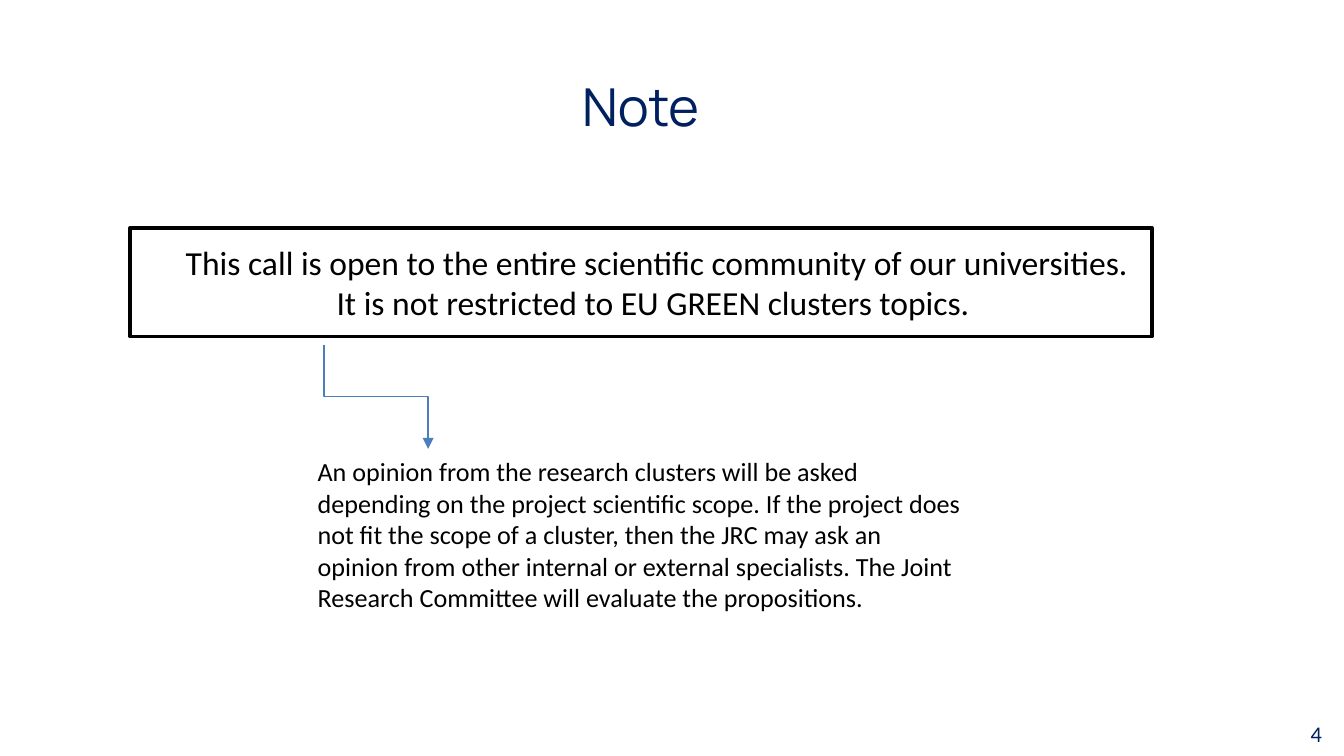
from dataclasses import dataclass

from lxml.etree import SubElement
from pptx import Presentation
from pptx.dml.color import RGBColor
from pptx.enum.shapes import MSO_CONNECTOR as Connector, MSO_SHAPE as Shape
from pptx.enum.text import MSO_ANCHOR as Anchor, PP_ALIGN as Align
from pptx.oxml.ns import qn
from pptx.shapes.autoshape import Shape as TextShape
from pptx.slide import Slide
from pptx.util import Inches, Pt

COLUMNS, ROWS = 100, 56.25
CELL = Inches(0.1)
NAVY = RGBColor(0x00, 0x20, 0x60)
BLUE = RGBColor(0x4B, 0x7E, 0xBC)
BLACK = RGBColor(0x00, 0x00, 0x00)
WHITE = RGBColor(0xFF, 0xFF, 0xFF)


@dataclass(frozen=True)
class Area:
    column: float
    row: float
    columns: float
    rows: float

    def lengths(self) -> list[int]:
        return [round(cells * CELL) for cells in (self.column, self.row, self.columns, self.rows)]


@dataclass(frozen=True)
class Label:
    area: Area
    text: str
    size: int
    color: RGBColor = BLACK
    font: str = "Calibri"
    align: Align = Align.LEFT
    anchor: Anchor = Anchor.TOP


TITLE = Label(Area(20.1, 3.15, 55.9, 9.4), "Note ", 28, NAVY, "Manrope", Align.CENTER, Anchor.MIDDLE)
LABELS = (
    Label(
        Area(12.1, 17.5, 73.6, 7.1),
        "This call is open to the entire scientific community of our universities. "
        "It is not restricted to EU GREEN clusters topics. ",
        18,
        align=Align.CENTER,
    ),
    Label(
        Area(22.65, 33.42, 50, 12.8),
        "An opinion from the research clusters will be asked depending on the project "
        "scientific scope. If the project does not fit the scope of a cluster, then the JRC "
        "may ask an opinion from other internal or external specialists. "
        "The Joint Research Committee will evaluate the propositions.  ",
        14,
    ),
    Label(Area(76, 53.1, 23.35, 3), "4", 12, NAVY, align=Align.RIGHT, anchor=Anchor.MIDDLE),
)
FRAME = Area(9.7, 16.95, 76, 8.1)
ARROW = Area(24.1, 25.65, 7.75, 7.75)


def place(shape: TextShape, area: Area) -> None:
    for name, length in zip(("left", "top", "width", "height"), area.lengths()):
        setattr(shape, name, length)


def write(shape: TextShape, label: Label) -> None:
    place(shape, label.area)
    frame = shape.text_frame
    frame.text = label.text
    frame_format = {
        "word_wrap": True,
        "vertical_anchor": label.anchor,
        "margin_left": Inches(0.1),
        "margin_right": Inches(0.1),
        "margin_top": Inches(0.05),
        "margin_bottom": Inches(0.05),
    }
    for name, value in frame_format.items():
        setattr(frame, name, value)
    paragraph = frame.paragraphs[0]
    paragraph.alignment = label.align
    font = paragraph.runs[0].font
    for name, value in {"name": label.font, "size": Pt(label.size)}.items():
        setattr(font, name, value)
    font.color.rgb = label.color


def draw_frame(slide: Slide, area: Area) -> None:
    shape = slide.shapes.add_shape(Shape.RECTANGLE, *area.lengths())
    shape.shadow.inherit = False
    shape.fill.solid()
    shape.fill.fore_color.rgb = WHITE
    shape.line.color.rgb = BLACK
    shape.line.width = Pt(2)


def draw_arrow(slide: Slide, area: Area) -> None:
    left, top, width, height = area.lengths()
    arrow = slide.shapes.add_connector(Connector.ELBOW, left + width, top, left, top + height)
    arrow.line.color.rgb = BLUE
    arrow.line.width = Pt(0.75)
    properties = arrow.element.spPr
    properties.find(qn("a:xfrm")).set("rot", str(270 * 60000))
    SubElement(properties.find(qn("a:ln")), qn("a:tailEnd"), type="triangle")
    SubElement(properties, qn("a:effectLst"))


def main() -> None:
    presentation = Presentation()
    presentation.slide_width = round(COLUMNS * CELL)
    presentation.slide_height = round(ROWS * CELL)
    slide = presentation.slides.add_slide(presentation.slide_layouts[5])
    draw_frame(slide, FRAME)
    write(slide.shapes.title, TITLE)
    for label in LABELS:
        write(slide.shapes.add_textbox(0, 0, 0, 0), label)
    draw_arrow(slide, ARROW)
    presentation.save("out.pptx")


if __name__ == "__main__":
    main()
